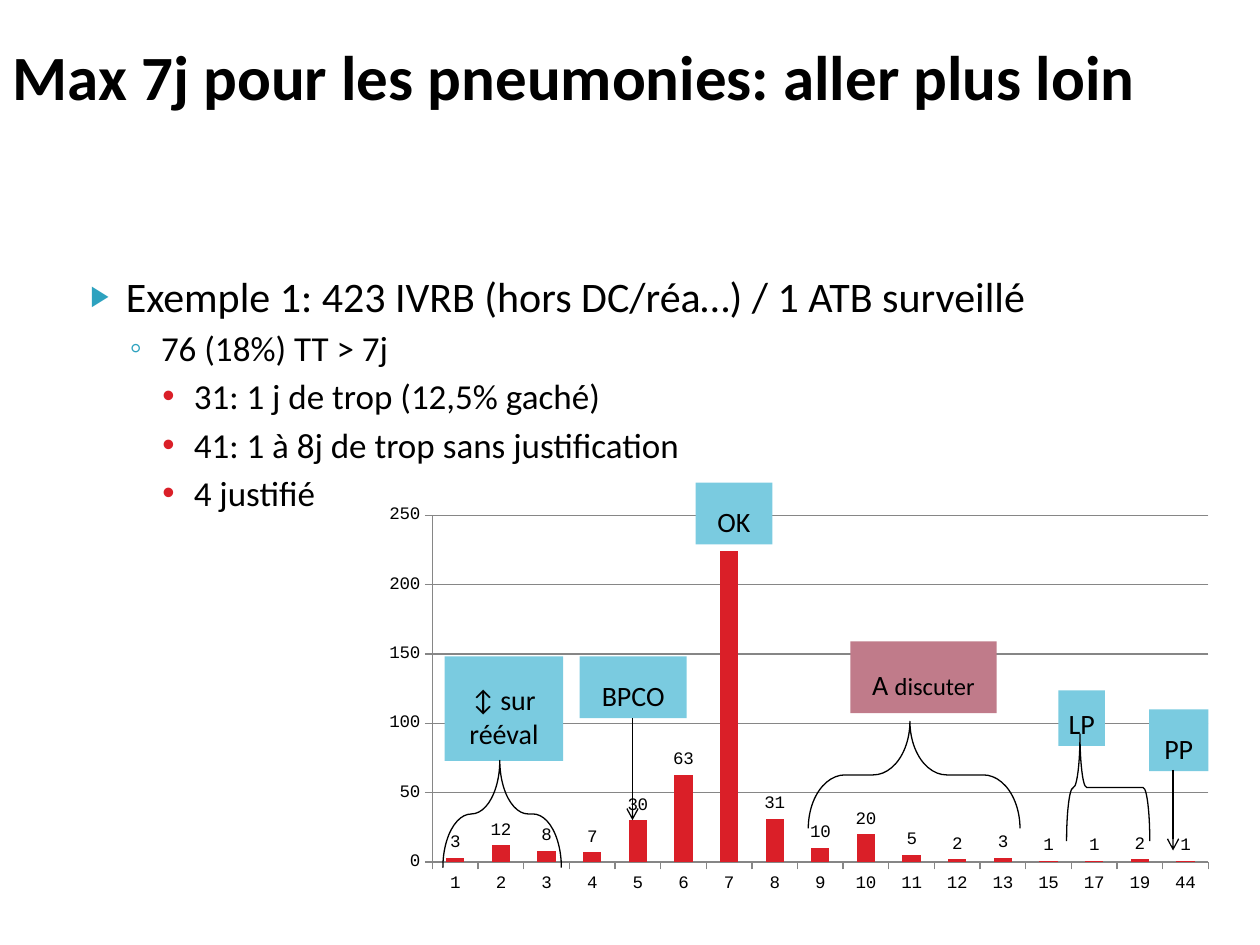
from lxml import etree
from pptx import Presentation
from pptx.chart.data import CategoryChartData
from pptx.dml.color import RGBColor
from pptx.enum.chart import XL_CHART_TYPE as ChartType, XL_LABEL_POSITION as LabelPosition, XL_TICK_MARK as Tick
from pptx.enum.shapes import MSO_CONNECTOR as Connector, MSO_SHAPE as Shape
from pptx.enum.text import MSO_ANCHOR as Anchor, PP_ALIGN as Align
from pptx.oxml import parse_xml
from pptx.oxml.ns import nsdecls, qn
from pptx.util import Inches, Pt

BLACK, RED, TEAL, SKY, ROSE, GREY = "000000", "DA1F28", "2DA2BF", "7ACBE0", "C07B8A", "868686"
TITLE = "Max 7j pour les pneumonies: aller plus loin"
OUTLINE = [
    (0, "Exemple 1: 423 IVRB (hors DC/réa…) / 1 ATB surveillé"),
    (1, "76 (18%) TT > 7j"),
    (2, "31: 1 j de trop (12,5% gaché)"),
    (2, "41: 1 à 8j de trop sans justification"),
    (2, "4 justifié"),
]
LEVELS = [
    (0.4, 0.28, 4, 24, "▶", TEAL, 68),
    (0.68, 0.25, 3.2, 20, "◦", TEAL, 100),
    (0.94, 0.25, 3.5, 20, "•", RED, 100),
]
DURATIONS = {
    "1": 3, "2": 12, "3": 8, "4": 7, "5": 30, "6": 63, "7": 224, "8": 31, "9": 10,
    "10": 20, "11": 5, "12": 2, "13": 3, "15": 1, "17": 1, "19": 2, "44": 1,
}
TAGS = [
    ((5.52, 3.83, 0.61, 0.49), SKY, 0.12, [("OK", 16)]),
    ((3.53, 5.21, 0.94, 0.83), SKY, 0.12, [("↕ sur rééval", 16)]),
    ((4.6, 5.21, 0.85, 0.49), SKY, 0.12, [("BPCO", 16)]),
    ((9.12, 5.63, 0.47, 0.49), SKY, 0.12, [("PP", 16)]),
    ((8.4, 5.48, 0.37, 0.44), SKY, 0.08, [("LP", 16)]),
    ((6.75, 5.09, 1.16, 0.57), ROSE, 0.12, [("A ", 16), ("discuter", 14)]),
]
ARROWS = [(5.02, 5.7, 6.51), (9.31, 6.11, 6.75)]
BRACES = [
    ((8.37, 5.92, 0.85, 0.66), (0.083, 0.839)),
    ((3.56, 5.99, 0.85, 0.94), (0.343, 0.52)),
    ((6.83, 5.31, 0.85, 1.68), (0.343, 0.52)),
]


def color(value):
    """Turn a hex string into a colour."""
    return RGBColor.from_string(value)


def inches(box):
    """Turn a box in inches into lengths."""
    return [Inches(length) for length in box]


def set_font(font, size, name="Calibri", bold=False):
    """Set a black font."""
    font.size, font.name, font.bold = Pt(size), name, bold
    font.color.rgb = color(BLACK)


def set_line(line, value=BLACK):
    """Set a thin solid line."""
    line.color.rgb = color(value)
    line.width = Pt(0.75)


def set_bullet(para, left, hanging, mark, value, percent):
    """Give a paragraph its indent and a coloured bullet."""
    props = para._p.get_or_add_pPr()
    props.set("marL", str(Inches(left)))
    props.set("indent", str(-Inches(hanging)))
    tint = etree.SubElement(props, qn("a:buClr"))
    etree.SubElement(tint, qn("a:srgbClr"), val=value)
    etree.SubElement(props, qn("a:buSzPct"), val=str(percent * 1000))
    etree.SubElement(props, qn("a:buFont"), typeface="Arial")
    etree.SubElement(props, qn("a:buChar"), char=mark)


def add_title(page, box):
    """Place and format the title."""
    title = page.shapes.title
    title.left, title.top, title.width, title.height = inches(box)
    title.text_frame.text = TITLE
    title.text_frame.vertical_anchor = Anchor.MIDDLE
    para = title.text_frame.paragraphs[0]
    para.alignment = Align.LEFT
    set_font(para.font, 36, bold=True)


def add_outline(page, box):
    """Write the bulleted outline."""
    frame = page.shapes.add_textbox(*inches(box)).text_frame
    frame.word_wrap = True
    for index, (level, text) in enumerate(OUTLINE):
        para = frame.add_paragraph() if index else frame.paragraphs[0]
        left, hanging, before, size, mark, value, percent = LEVELS[level]
        para.text, para.level, para.space_before = text, level, Pt(before)
        set_font(para.font, size)
        set_bullet(para, left, hanging, mark, value, percent)


def add_duration_chart(page, box):
    """Draw the columns of patients by treatment length."""
    data = CategoryChartData()
    data.categories = list(DURATIONS)
    data.add_series("Series 1", list(DURATIONS.values()))
    chart = page.shapes.add_chart(ChartType.COLUMN_CLUSTERED, *inches(box), data).chart
    chart.has_legend = chart.has_title = False
    set_font(chart.font, 10, "Courier New")
    for axis in (chart.category_axis, chart.value_axis):
        axis.major_tick_mark, axis.minor_tick_mark = Tick.OUTSIDE, Tick.NONE
        set_line(axis.format.line, GREY)
    values = chart.value_axis
    values.minimum_scale, values.maximum_scale, values.major_unit = 0, 250, 50
    values.has_major_gridlines = True
    set_line(values.major_gridlines.format.line, GREY)
    plot = chart.plots[0]
    plot.gap_width, plot.vary_by_categories = 150, False
    plot.has_data_labels = True
    plot.data_labels.show_value = True
    plot.data_labels.position = LabelPosition.OUTSIDE_END
    fill = plot.series[0].format.fill
    fill.solid()
    fill.fore_color.rgb = color(RED)
    area = chart._chartSpace.find(".//" + qn("c:plotArea"))
    for old in area.findall(qn("c:layout")):
        area.remove(old)
    places = zip("xywh", (0.082, 0.047, 0.899, 0.812))
    sizes = "".join(f'<c:{key} val="{value}"/>' for key, value in places)
    area.insert(0, parse_xml(
        f'<c:layout {nsdecls("c")}><c:manualLayout><c:layoutTarget val="inner"/>'
        f'<c:xMode val="edge"/><c:yMode val="edge"/>{sizes}</c:manualLayout></c:layout>'))


def add_tag(page, box, value, inset, parts):
    """Add a coloured comment box."""
    tag = page.shapes.add_shape(Shape.RECTANGLE, *inches(box))
    tag.shadow.inherit = False
    tag.fill.solid()
    tag.fill.fore_color.rgb = color(value)
    tag.line.fill.background()
    frame = tag.text_frame
    frame.word_wrap, frame.vertical_anchor = True, Anchor.MIDDLE
    frame.margin_left = frame.margin_right = frame.margin_bottom = 0
    frame.margin_top = Inches(inset)
    para = frame.paragraphs[0]
    para.alignment = Align.CENTER
    for text, size in parts:
        span = para.add_run()
        span.text = text
        set_font(span.font, size)


def add_arrow(page, x, top, bottom):
    """Add an arrow pointing down to a column."""
    arrow = page.shapes.add_connector(Connector.STRAIGHT, *inches((x, top, x, bottom)))
    set_line(arrow.line)
    etree.SubElement(arrow.line._get_or_add_ln(), qn("a:tailEnd"), type="arrow")
    etree.SubElement(arrow._element.spPr, qn("a:effectLst"))


def add_brace(page, box, bends):
    """Add a brace that spans several columns."""
    brace = page.shapes.add_shape(Shape.LEFT_BRACE, *inches(box))
    brace.rotation = 90
    brace.adjustments[0], brace.adjustments[1] = bends
    brace.shadow.inherit = False
    brace.fill.background()
    set_line(brace.line)


def main():
    """Build the deck."""
    deck = Presentation()
    deck.slide_width, deck.slide_height = Inches(10), Inches(7.5)
    page = deck.slides.add_slide(deck.slide_layouts[5])
    add_title(page, (0, -0.03, 10, 1.25))
    add_outline(page, (0.5, 2.1, 9, 4.47))
    add_duration_chart(page, (2.87, 3.93, 6.85, 3.39))
    for tag in TAGS:
        add_tag(page, *tag)
    for arrow in ARROWS:
        add_arrow(page, *arrow)
    for brace in BRACES:
        add_brace(page, *brace)
    deck.save("out.pptx")


if __name__ == "__main__":
    main()
